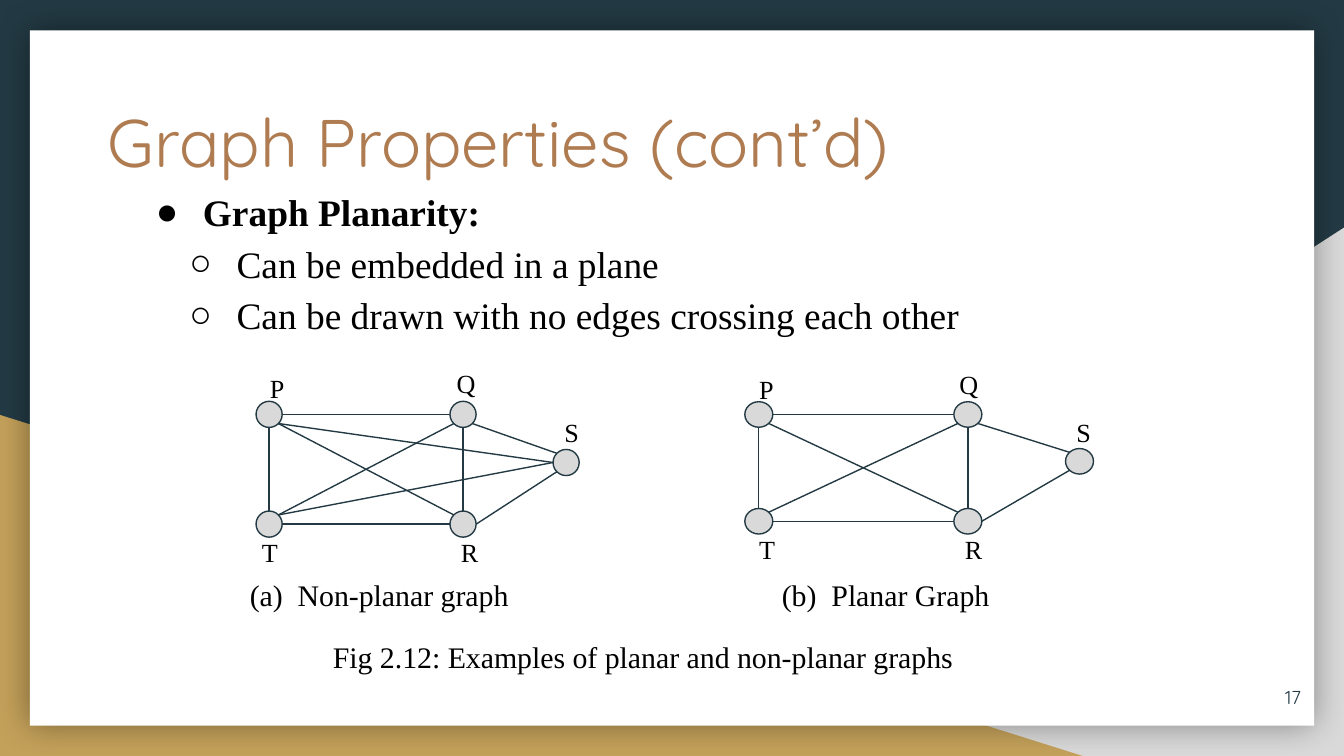
from lxml.etree import SubElement
from pptx import Presentation
from pptx.dml.color import RGBColor
from pptx.enum.shapes import MSO_CONNECTOR, MSO_SHAPE
from pptx.enum.text import MSO_ANCHOR, MSO_AUTO_SIZE, PP_ALIGN
from pptx.oxml.ns import qn
from pptx.util import Pt

NAVY, GOLD, GREY, COPPER = "233A44", "C4A15A", "D9D9D9", "AF7B51"
SERIF, SANS = "Times New Roman", "Quicksand"

# Points on an ellipse as fractions of its box
SITES = {"N": (.5, 0), "S": (.5, 1), "W": (0, .5), "E": (1, .5),
         "NW": (.15, .15), "NE": (.85, .15), "SW": (.15, .85), "SE": (.85, .85)}
PLANAR_EDGES = ["Q.W P.E", "R.W T.E", "R.NW P.SE", "T.NE Q.SW",
                "R.E S.SW", "Q.SE S.NW", "R.N Q.S", "T.N P.S"]
CROSSING_EDGES = ["S.W P.SE", "S.W T.NE"]


def rgb(color):
    return RGBColor.from_string(color)


def add_text(p, text, size=16, font=SERIF, color="000000", bold=False):
    r = p.add_run()
    r.text = text
    r.font.size = Pt(size)
    r.font.name = font
    r.font.color.rgb = rgb(color)
    r.font.bold = bold


def set_bullet(p, char, margin, indent):
    pPr = p._p.get_or_add_pPr()
    pPr.set("marL", str(Pt(margin)))
    pPr.set("indent", str(Pt(indent)))
    SubElement(SubElement(pPr, qn("a:buClr")), qn("a:srgbClr"), val="000000")
    SubElement(pPr, qn("a:buFont"), typeface=SERIF)
    SubElement(pPr, qn("a:buChar"), char=char)


class Deck:
    """Holds the line style, the text insets and the current slide."""

    line_color, line_width, inset = NAVY, 0.75, 7.2

    def __init__(self, width, height):
        self.prs = Presentation()
        self.prs.slide_width, self.prs.slide_height = Pt(width), Pt(height)
        self.s = self.prs.slides.add_slide(self.prs.slide_layouts[1])

    def background(self, color):
        fill = self.s.background.fill
        fill.solid()
        fill.fore_color.rgb = rgb(color)

    def outline(self, line):
        line.color.rgb = rgb(self.line_color)
        line.width = Pt(self.line_width)

    def shape(self, kind, box, fill, outlined=False):
        sp = self.s.shapes.add_shape(kind, *map(Pt, box))
        sp.shadow.inherit = False
        sp.fill.solid()
        sp.fill.fore_color.rgb = rgb(fill)
        if outlined:
            self.outline(sp.line)
        else:
            sp.line.fill.background()
        return sp

    def glow(self, sp, blur, alpha):
        """Add a soft black shadow on all sides."""
        effects = sp._element.spPr.find(qn("a:effectLst"))
        shadow = SubElement(effects, qn("a:outerShdw"), blurRad=str(Pt(blur)),
                            dist="0", algn="ctr", rotWithShape="0")
        color = SubElement(shadow, qn("a:srgbClr"), val="000000")
        SubElement(color, qn("a:alpha"), val=str(alpha * 1000))

    def line(self, start, end):
        c = self.s.shapes.add_connector(MSO_CONNECTOR.STRAIGHT, *map(Pt, start + end))
        self.outline(c.line)
        SubElement(c._element.spPr, qn("a:effectLst"))

    def frame(self, sp, anchor=MSO_ANCHOR.TOP):
        tf = sp.text_frame
        tf.word_wrap = True
        tf.auto_size = MSO_AUTO_SIZE.NONE
        tf.vertical_anchor = anchor
        tf.margin_left = tf.margin_right = tf.margin_top = tf.margin_bottom = Pt(self.inset)
        return tf

    def placeholder(self, idx, box):
        sp = self.s.placeholders[idx]
        sp.left, sp.top, sp.width, sp.height = map(Pt, box)
        return self.frame(sp)

    def title(self, text, box):
        p = self.placeholder(0, box).paragraphs[0]
        p.alignment = PP_ALIGN.LEFT
        add_text(p, text, size=36, font=SANS, color=COPPER)

    def bullets(self, items, box):
        tf = self.placeholder(1, box)
        for i, (level, text) in enumerate(items):
            p = tf.add_paragraph() if i else tf.paragraphs[0]
            p.level = level
            p.line_spacing = 1.15
            p.space_before = Pt(0 if level else 6)
            set_bullet(p, "●○"[level], 54 + 18 * level, -25.2)
            add_text(p, text, size=20, bold=level == 0)

    def text(self, text, box, align=PP_ALIGN.LEFT, anchor=MSO_ANCHOR.TOP, **style):
        tf = self.frame(self.s.shapes.add_textbox(*map(Pt, box)), anchor)
        tf.paragraphs[0].alignment = align
        add_text(tf.paragraphs[0], text, **style)

    def graph(self, columns, rows, node_size, edges, labels):
        """Draw nodes P, Q, T, R on a grid with S to the right, then edges and labels."""
        (x1, x2, x3), (y1, y2, y3) = columns, rows
        w, h = node_size
        nodes = {"P": (x1, y1), "Q": (x2, y1), "T": (x1, y3), "R": (x2, y3), "S": (x3, y2)}
        for x, y in nodes.values():
            self.shape(MSO_SHAPE.OVAL, (x, y, w, h), GREY, outlined=True)

        def point(ref):
            name, site = ref.split(".")
            (x, y), (fx, fy) = nodes[name], SITES[site]
            return x + fx * w, y + fy * h

        for edge in edges:
            start, end = edge.split()
            self.line(point(start), point(end))
        for name, (x, y) in labels.items():
            self.text(name, (x, y, 24, 23), size=14)


def main():
    deck = Deck(720, 405)
    deck.background(NAVY)
    right = deck.shape(MSO_SHAPE.RIGHT_TRIANGLE, (282, 122, 438, 283), GREY)
    right._element.spPr.find(qn("a:xfrm")).set("flipH", "1")
    deck.shape(MSO_SHAPE.RIGHT_TRIANGLE, (0, 222.3, 580, 182.7), GOLD)
    card = deck.shape(MSO_SHAPE.RECTANGLE, (16, 16.2, 688, 372.5), "FFFFFF")
    deck.glow(card, blur=18, alpha=40)
    # Decoration goes behind the placeholders
    tree = deck.s.shapes._spTree
    for ph in list(deck.s.placeholders):
        tree.append(ph._element)

    deck.title("Graph Properties (cont’d)", (50.4, 46.8, 473, 49))
    deck.bullets([(0, "Graph Planarity:"),
                  (1, "Can be embedded in a plane"),
                  (1, "Can be drawn with no edges crossing each other")],
                 (47.5, 90.7, 516, 88))

    deck.graph((137.2, 241.1, 296.3), (215, 240.8, 273.8), (14, 14),
               PLANAR_EDGES + CROSSING_EDGES,
               {"P": (137.5, 192.2), "Q": (237.6, 189.4), "S": (295.2, 216),
                "T": (133.2, 280.1), "R": (239.8, 280.1)})
    deck.graph((399, 511, 570.8), (215.2, 240.3, 272.4), (15, 13.7),
               PLANAR_EDGES,
               {"P": (399.6, 193), "Q": (506.9, 190.1), "S": (569.5, 216),
                "T": (399.6, 278.6), "R": (509.8, 278.6)})

    deck.text("(a)  Non-planar graph", (126.7, 301.7, 162, 23))
    deck.text("(b)  Planar Graph", (411.8, 301.7, 130, 23))
    deck.text("Fig 2.12: Examples of planar and non-planar graphs", (171.2, 334.8, 363, 23))
    deck.text("17", (661, 357.8, 43, 31), align=PP_ALIGN.RIGHT,
              anchor=MSO_ANCHOR.MIDDLE, size=10, font=SANS, color=NAVY)
    deck.prs.save("out.pptx")


if __name__ == "__main__":
    main()
